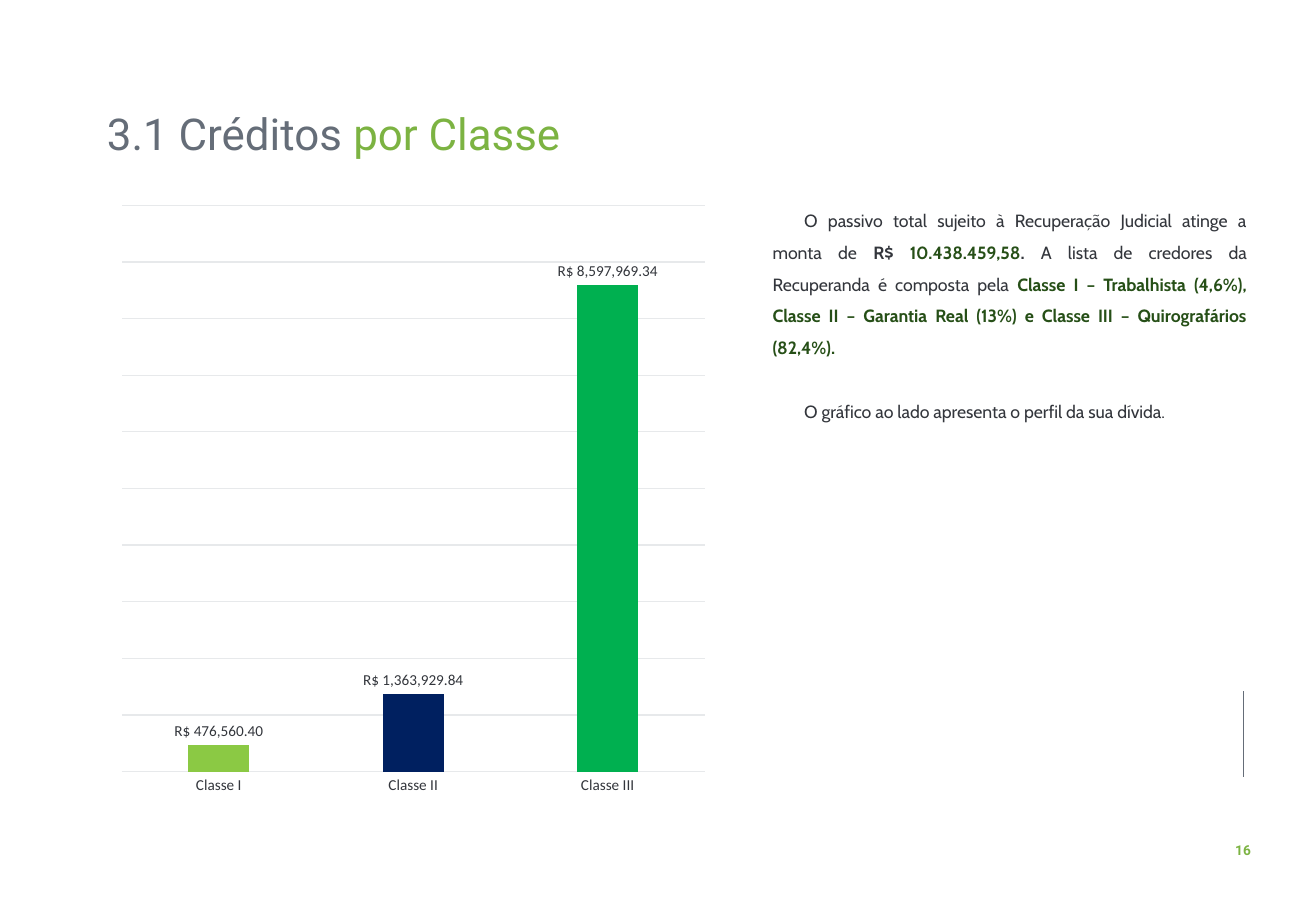
from lxml import etree
from pptx import Presentation, util as u
from pptx.chart.data import CategoryChartData
from pptx.dml.color import RGBColor
from pptx.enum import chart as ec, shapes, text
from pptx.oxml.ns import qn

WIDTH, HEIGHT = 10.83, 7.5
GRAY = RGBColor(0x65, 0x6D, 0x78)
LIME = RGBColor(0x7C, 0xB3, 0x42)
INK = RGBColor(0x33, 0x36, 0x3C)
MOSS = RGBColor(0x26, 0x4F, 0x17)
GRID = RGBColor(0xE7, 0xE9, 0xEB)
LEAF = RGBColor(0x8B, 0xC9, 0x44)
NAVY = RGBColor(0x00, 0x20, 0x60)
GREEN = RGBColor(0x00, 0xB0, 0x50)

TITLE = [[("3.1 Créditos ", GRAY, False), ("por Classe", LIME, False)]]
BODY = [
    [
        ("O passivo total sujeito à Recuperação Judicial atinge a monta de ", INK, False),
        ("R$ ", INK, True),
        ("10.438.459,58", MOSS, True),
        (". ", INK, True),
        ("A lista de credores da Recuperanda é composta pela ", INK, False),
        ("Classe I – Trabalhista (4,6%), Classe II – Garantia Real (13%) "
         "e Classe III – Quirografários (82,4%).", MOSS, True),
    ],
    [("O gráfico ao lado apresenta o perfil da sua dívida.", INK, False)],
]
PAGE = [[("16", LIME, True)]]
DEBTS = [
    ("Classe I", 476560.40, LEAF),
    ("Classe II", 1363929.84, NAVY),
    ("Classe III", 8597969.34, GREEN),
]
MONEY = '"R$"\\ #,##0.00'

AREAS = {
    "title": (7.2, 11.47, 75.53, 7.07),
    "body": (57.8, 21.2, 37.86, 22.13),
    "chart": (8.31, 21.2, 46.17, 67.33),
    "page": (92.89, 91.73, 3.14, 3.2),
    "rule": (94.46, 75.87, 0, 9.47),
}


def area(name):
    sides = (WIDTH, HEIGHT, WIDTH, HEIGHT)
    return [u.Inches(side * part / 100) for side, part in zip(sides, AREAS[name])]


def apply(item, **form):
    for key, value in form.items():
        setattr(item, key, value)


def paint(font, color, **form):
    apply(font, **form)
    font.color.rgb = color


def write(shape, paras, face, size, align, lead, wrap=True, indent=0, gap=0):
    frame = shape.text_frame
    apply(frame, word_wrap=wrap, auto_size=text.MSO_AUTO_SIZE.NONE)
    for spot, runs in enumerate(paras):
        para = frame.add_paragraph() if spot else frame.paragraphs[0]
        apply(para, alignment=align, line_spacing=lead,
              space_before=u.Pt(gap if spot else 0))
        if indent:
            para._p.get_or_add_pPr().set("indent", str(u.Inches(indent)))
        for words, color, bold in runs:
            run = para.add_run()
            run.text = words
            paint(run.font, color, name=face, size=u.Pt(size), bold=bold)
    return frame


def stroke(line, color, width):
    line.color.rgb = color
    line.width = u.Pt(width)


def draw_chart(slide):
    data = CategoryChartData(number_format=MONEY)
    data.categories = [name for name, _, _ in DEBTS]
    data.add_series("Series 1", [debt for _, debt, _ in DEBTS])
    chart = slide.shapes.add_chart(
        ec.XL_CHART_TYPE.COLUMN_CLUSTERED, *area("chart"), data).chart
    apply(chart, has_legend=False, has_title=False)
    paint(chart.font, INK, name="Calibri", size=u.Pt(10))

    cats, vals = chart.category_axis, chart.value_axis
    apply(cats, major_tick_mark=ec.XL_TICK_MARK.NONE)
    paint(cats.tick_labels.font, INK, name="Calibri", size=u.Pt(9))
    stroke(cats.format.line, GRID, 0.75)
    apply(vals, visible=False, has_major_gridlines=True,
          minimum_scale=0, maximum_scale=10_000_000, major_unit=1_000_000)
    stroke(vals.major_gridlines.format.line, GRID, 0.75)

    plot = chart.plots[0]
    apply(plot, gap_width=219, overlap=-27, vary_by_categories=False,
          has_data_labels=True)
    labels = plot.data_labels
    apply(labels, show_value=True, number_format=MONEY,
          number_format_is_linked=False,
          position=ec.XL_LABEL_POSITION.OUTSIDE_END)
    paint(labels.font, INK, name="Calibri", size=u.Pt(9))
    series = plot.series[0]
    series.invert_if_negative = False
    for spot, (_, _, color) in enumerate(DEBTS):
        fill = series.points[spot].format.fill
        fill.solid()
        fill.fore_color.rgb = color


def main():
    deck = Presentation()
    apply(deck, slide_width=u.Inches(WIDTH), slide_height=u.Inches(HEIGHT))
    slide = deck.slides.add_slide(deck.slide_layouts[5])

    left, top, wide, high = area("rule")
    rule = slide.shapes.add_connector(
        shapes.MSO_CONNECTOR.STRAIGHT, left, top, left + wide, top + high)
    stroke(rule.line, GRAY, 0.5)
    etree.SubElement(rule._element.spPr, qn("a:effectLst"))

    align = text.PP_ALIGN
    title = slide.shapes.title
    apply(title, **dict(zip(("left", "top", "width", "height"), area("title"))))
    frame = write(title, TITLE, "Roboto", 26, align.LEFT, 0.9)
    frame.vertical_anchor = text.MSO_ANCHOR.MIDDLE

    body = slide.shapes.add_textbox(*area("body"))
    write(body, BODY, "Cabin", 10.5, align.JUSTIFY, 1.5, indent=0.26, gap=19)

    page = slide.shapes.add_textbox(*area("page"))
    frame = write(page, PAGE, "Roboto", 8.1, align.CENTER, 1, wrap=False)
    frame.vertical_anchor = text.MSO_ANCHOR.MIDDLE

    draw_chart(slide)
    deck.save("out.pptx")


if __name__ == "__main__":
    main()
